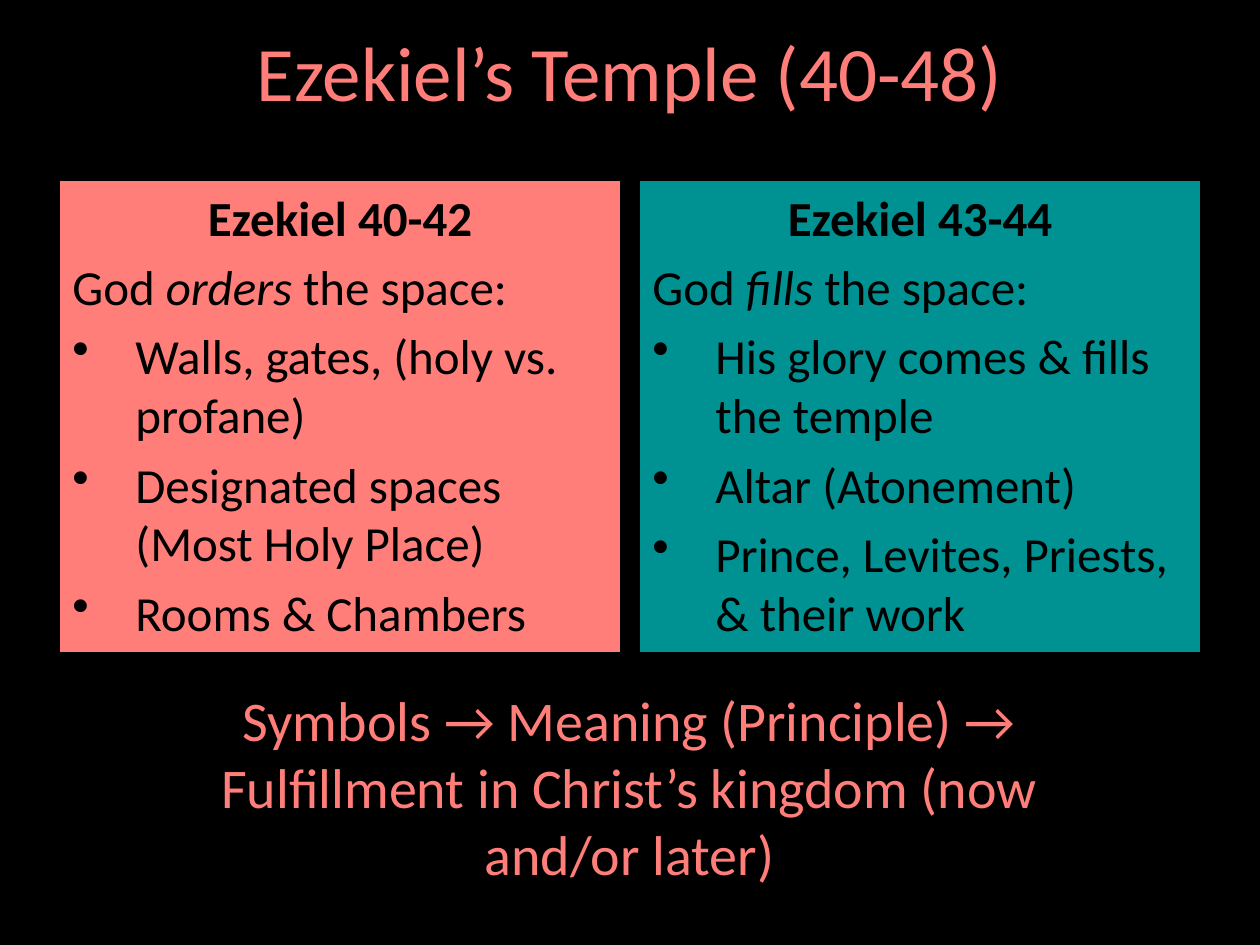
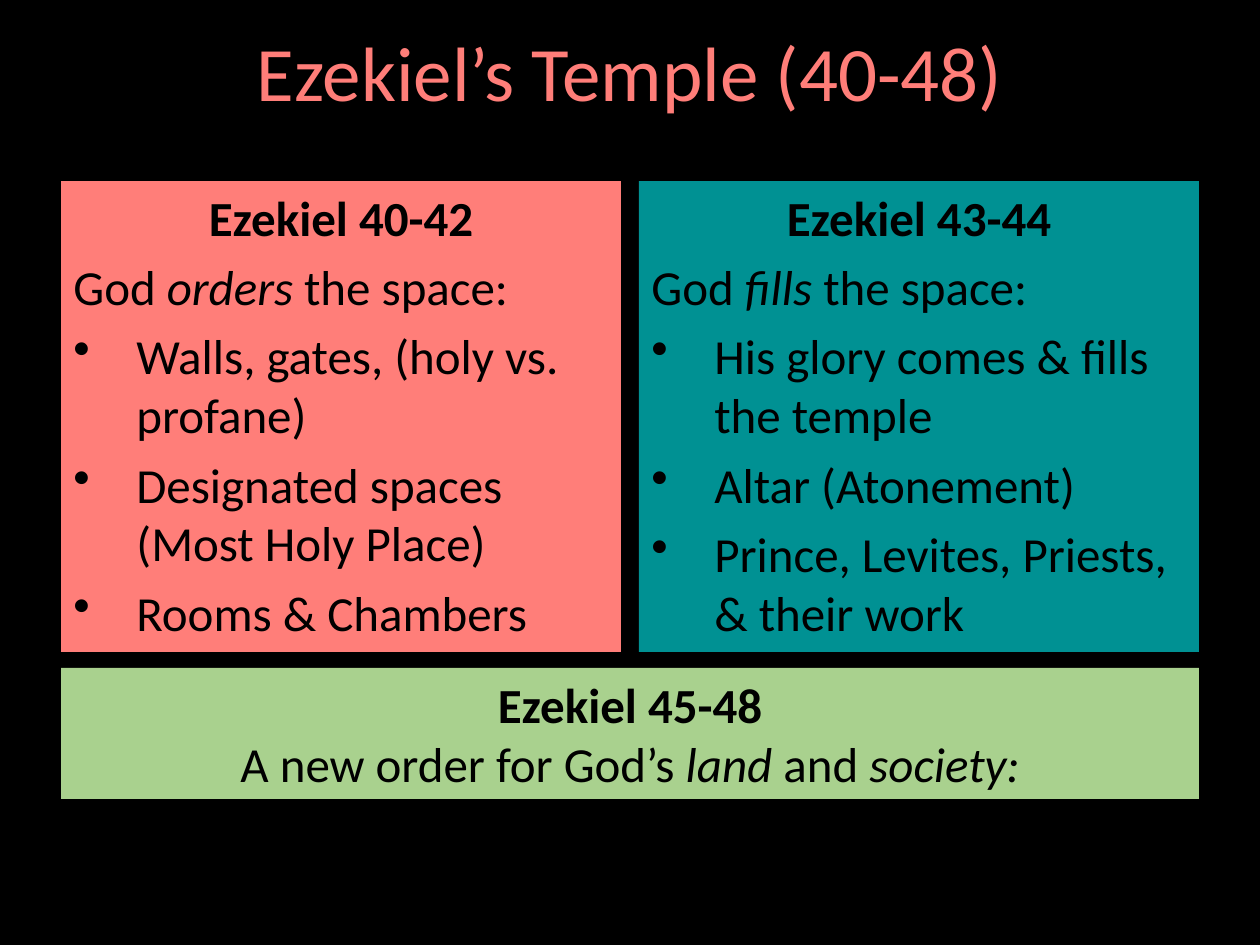
from dataclasses import dataclass

from lxml import etree
from pptx import Presentation
from pptx import util as u
from pptx.dml.color import RGBColor
from pptx.enum import shapes, text
from pptx.oxml.ns import qn

# Shared style
EMU_PER_PX = 914400 / 126
SLIDE_WIDTH, SLIDE_HEIGHT = 1260, 945
FONT = "Calibri"
BLACK, CORAL, TEAL, GREEN = "000000", "FF7E79", "009193", "A9D18E"
TITLE = "Ezekiel’s Temple (40-48)"
BODY_SIZE = 28
PANEL_TOP, PANEL_WIDTH, PANEL_HEIGHT = 181, 560, 471
BULLET_INDENT = 63


@dataclass(frozen=True)
class Run:
    text: str
    bold: bool = False
    italic: bool = False


@dataclass(frozen=True)
class Line:
    runs: tuple[Run, ...]
    centered: bool = False
    bullet: bool = False
    space_after: int = 0
    spacing: float = 1.0


@dataclass(frozen=True)
class Box:
    left: int
    top: int
    width: int
    height: int


@dataclass(frozen=True)
class Panel:
    heading: str
    verb: str
    bullets: tuple[str, ...]
    fill: str

    def lines(self) -> list[Line]:
        intro = (Run("God "), Run(self.verb, italic=True), Run(" the space:"))
        return [
            Line((Run(self.heading, bold=True),), centered=True, space_after=6),
            Line(intro, space_after=6),
            *(Line((Run(item),), bullet=True, space_after=6) for item in self.bullets),
        ]


PANELS = (
    Panel("Ezekiel 40-42", "orders",
          ("Walls, gates, (holy vs. profane)",
           "Designated spaces (Most Holy Place)",
           "Rooms & Chambers"), CORAL),
    Panel("Ezekiel 43-44", "fills",
          ("His glory comes & fills the temple",
           "Altar (Atonement)",
           "Prince, Levites, Priests, & their work"), TEAL),
)


def px(length: int) -> u.Emu:
    return u.Emu(round(length * EMU_PER_PX))


def color(value: str) -> RGBColor:
    return RGBColor.from_string(value)


def place(box: Box) -> tuple[u.Emu, ...]:
    return px(box.left), px(box.top), px(box.width), px(box.height)


def add_bullet(paragraph) -> None:
    properties = paragraph._p.get_or_add_pPr()
    properties.set("marL", str(px(BULLET_INDENT)))
    properties.set("indent", str(-px(BULLET_INDENT)))
    etree.SubElement(properties, qn("a:buChar")).set("char", "•")


def write(shape, lines: list[Line], size: int, ink: str) -> None:
    frame = shape.text_frame
    frame.word_wrap = True
    frame.vertical_anchor = text.MSO_ANCHOR.TOP
    frame.auto_size = text.MSO_AUTO_SIZE.SHAPE_TO_FIT_TEXT
    for index, line in enumerate(lines):
        paragraph = frame.add_paragraph() if index else frame.paragraphs[0]
        if line.bullet:
            add_bullet(paragraph)
        paragraph.alignment = text.PP_ALIGN.CENTER if line.centered else text.PP_ALIGN.LEFT
        paragraph.space_after = u.Pt(line.space_after)
        paragraph.line_spacing = line.spacing
        for part in line.runs:
            run = paragraph.add_run()
            run.text = part.text
            run.font.name = FONT
            run.font.size = u.Pt(size)
            run.font.bold = part.bold
            run.font.italic = part.italic
            run.font.color.rgb = color(ink)


def add_text(slide, box: Box, lines: list[Line], size: int):
    shape = slide.shapes.add_textbox(*place(box))
    write(shape, lines, size, CORAL)
    return shape


def add_block(slide, box: Box, fill: str, lines: list[Line]) -> None:
    shape = slide.shapes.add_shape(shapes.MSO_SHAPE.RECTANGLE, *place(box))
    shape.shadow.inherit = False
    shape.fill.solid()
    shape.fill.fore_color.rgb = color(fill)
    shape.line.fill.background()
    write(shape, lines, BODY_SIZE, BLACK)


def add_temple_slide(presentation, margin: int):
    """Black slide with the title and the two panels set in by the margin."""
    slide = presentation.slides.add_slide(presentation.slide_layouts[6])
    slide.background.fill.solid()
    slide.background.fill.fore_color.rgb = color(BLACK)
    title = add_text(slide, Box(87, 20, 1086, 113),
                     [Line((Run(TITLE),), centered=True, spacing=0.9)], 44)
    title.text_frame.auto_size = text.MSO_AUTO_SIZE.NONE
    title.text_frame.vertical_anchor = text.MSO_ANCHOR.MIDDLE
    for left, panel in zip((margin, SLIDE_WIDTH - margin - PANEL_WIDTH), PANELS):
        add_block(slide, Box(left, PANEL_TOP, PANEL_WIDTH, PANEL_HEIGHT),
                  panel.fill, panel.lines())
    return slide


def main() -> None:
    presentation = Presentation()
    presentation.slide_width = px(SLIDE_WIDTH)
    presentation.slide_height = px(SLIDE_HEIGHT)

    # Slide 1: panels and how to read the symbols
    slide = add_temple_slide(presentation, margin=60)
    principle = Run("Symbols → Meaning (Principle) → "
                    "Fulfillment in Christ’s kingdom (now and/or later)")
    add_text(slide, Box(181, 679, 897, 217), [Line((principle,), centered=True)], 32)

    # Slide 2: panels and the closing band
    margin = 61
    slide = add_temple_slide(presentation, margin)
    new_order = (Run("A new order for God’s "), Run("land", italic=True),
                 Run(" and "), Run("society:", italic=True))
    add_block(slide, Box(margin, 668, SLIDE_WIDTH - 2 * margin, 131), GREEN,
              [Line((Run("Ezekiel 45-48", bold=True),), centered=True),
               Line(new_order, centered=True)])

    presentation.save("out.pptx")


if __name__ == "__main__":
    main()
